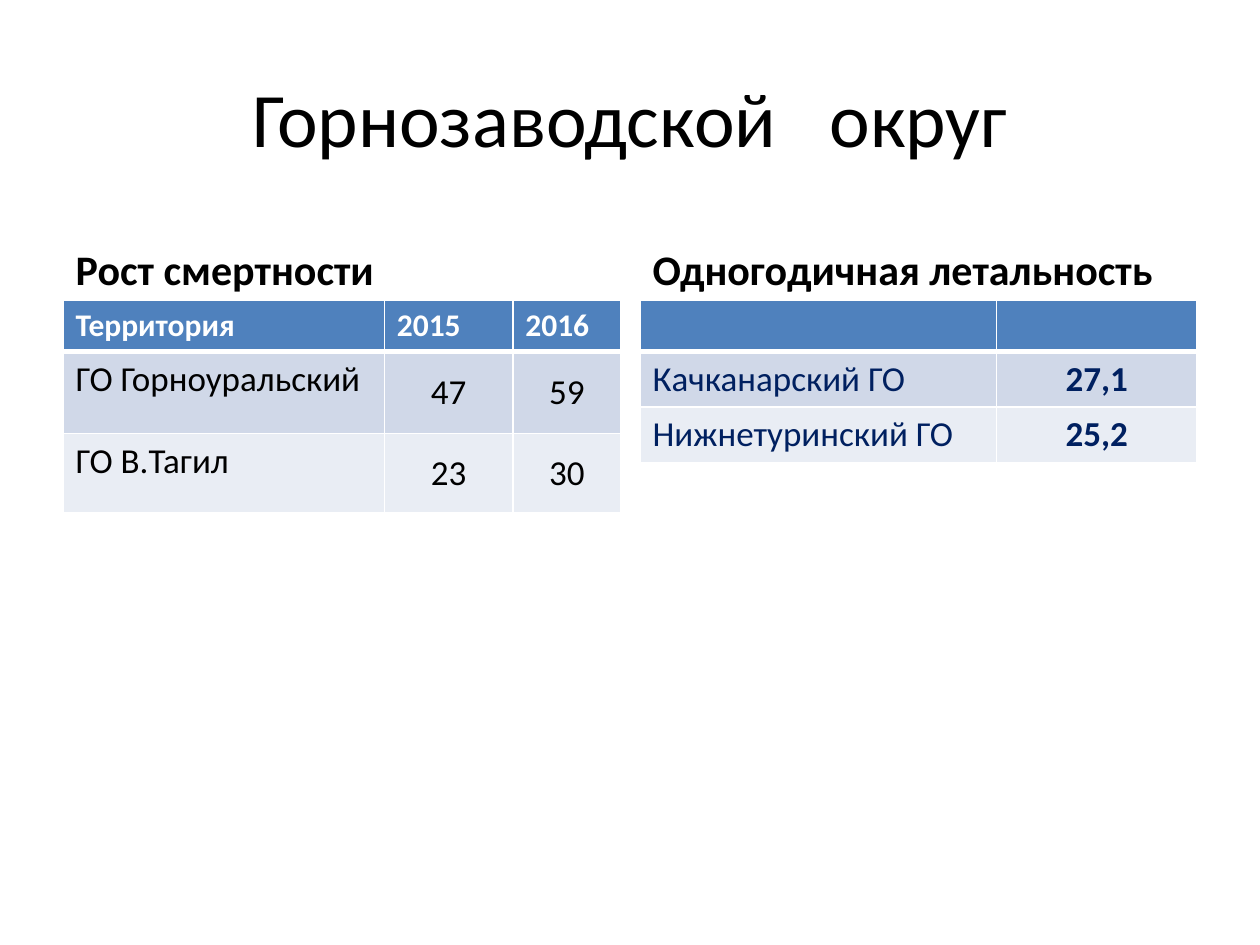
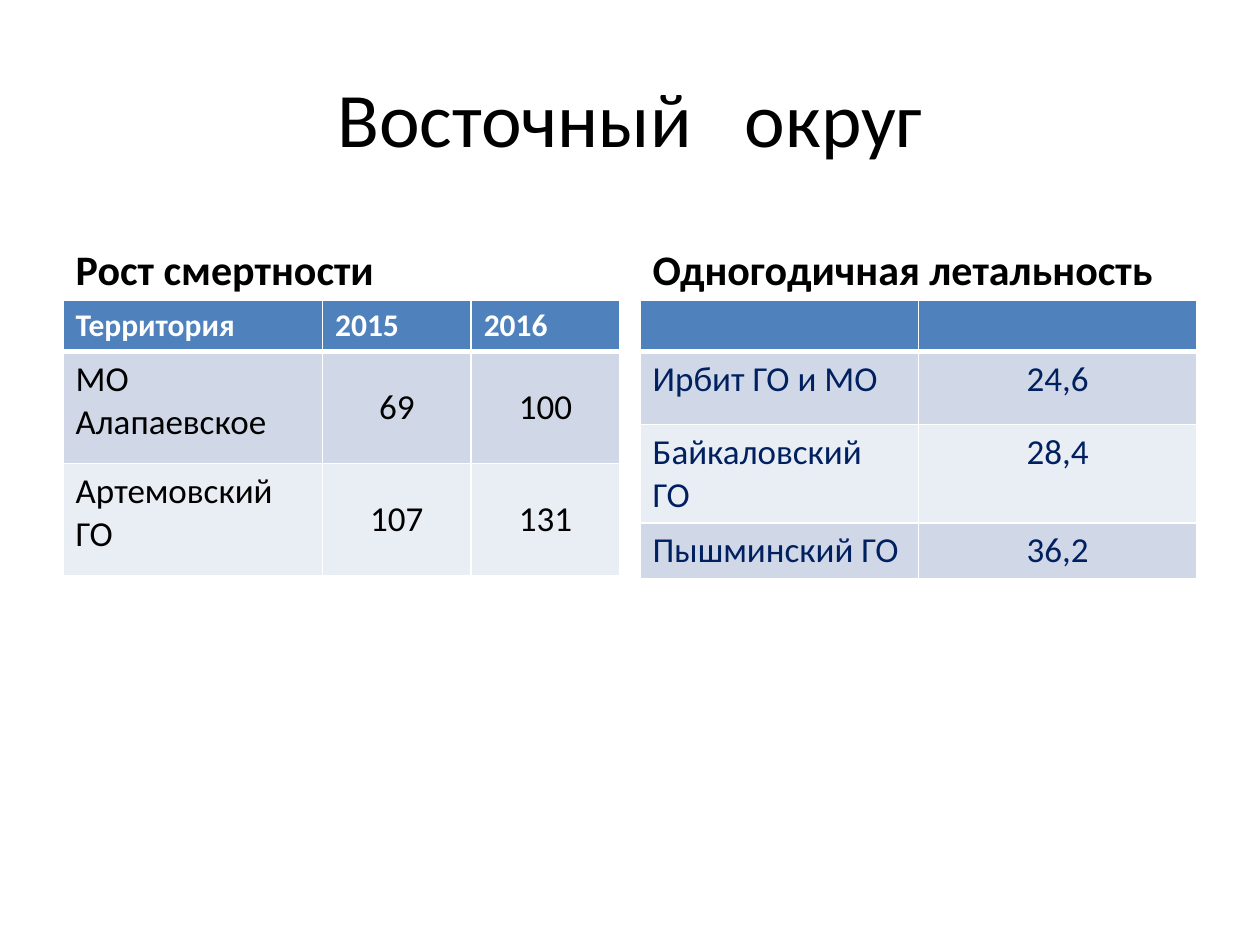
"""Build two district slides comparing mortality growth and one-year lethality."""
from lxml import etree
from pptx import Presentation
from pptx.dml.color import RGBColor
from pptx.enum.text import MSO_ANCHOR, PP_ALIGN
from pptx.oxml.ns import qn
from pptx.util import Inches, Pt

BLACK = RGBColor(0x00, 0x00, 0x00)
WHITE = RGBColor(0xFF, 0xFF, 0xFF)
NAVY = RGBColor(0x00, 0x20, 0x60)
HEADER = RGBColor(0x4F, 0x81, 0xBD)
BANDS = [RGBColor(0xD0, 0xD8, 0xE8), RGBColor(0xE9, 0xED, 0xF4)]

LEFT, RIGHT, COL_W = 0.5, 5.08, 4.42
HEAD_TOP, HEAD_H = 1.68, 0.7
TABLE_TOP = HEAD_TOP + HEAD_H
HEADER_H = 0.41
WORD_GAP = 20

growth_head = ["Территория", "2015", "2016"]
lethality_head = ["", ""]

districts = [
    {"name": ["Горнозаводской", "округ"],
     "growth": [["ГО Горноуральский", "47", "59"], ["ГО В.Тагил", "23", "30"]],
     "growth_cols": [2.55, 1.02, 0.86], "growth_rows": [0.65, 0.63],
     "lethality": [["Качканарский ГО", "27,1"], ["Нижнетуринский ГО", "25,2"]],
     "lethality_cols": [2.83, 1.59], "lethality_rows": [0.41, 0.41],
     "bold_rates": True},
    {"name": ["Восточный", "округ"],
     "growth": [["МО Алапаевское", "69", "100"], ["Артемовский ГО", "107", "131"]],
     "growth_cols": [2.06, 1.18, 1.18], "growth_rows": [0.89, 0.89],
     "lethality": [["Ирбит ГО и МО", "24,6"], ["Байкаловский ГО", "28,4"],
                   ["Пышминский ГО", "36,2"]],
     "lethality_cols": [2.21, 2.21], "lethality_rows": [0.58, 0.41, 0.41],
     "bold_rates": False},
]


def add_text(p, text, size=20, color=BLACK, bold=False, align=PP_ALIGN.LEFT):
    p.alignment = align
    r = p.add_run()
    r.text = text
    r.font.name = "Calibri"
    r.font.size = Pt(size)
    r.font.bold = bold
    r.font.color.rgb = color
    return r


def format_cell(cell, fill, top, bottom):
    tc_pr = cell._tc.get_or_add_tcPr()
    for side, width in (("L", 1), ("R", 1), ("T", top), ("B", bottom)):
        ln = etree.SubElement(tc_pr, qn(f"a:ln{side}"), w=str(Pt(width)))
        solid = etree.SubElement(ln, qn("a:solidFill"))
        etree.SubElement(solid, qn("a:srgbClr"), val=str(WHITE))
    cell.fill.solid()
    cell.fill.fore_color.rgb = fill


prs = Presentation()
prs.slide_width, prs.slide_height = Inches(10), Inches(7.5)

for district in districts:
    slide = prs.slides.add_slide(prs.slide_layouts[4])
    title, growth_title, growth_body, rate_title, rate_body = slide.placeholders
    for sp in (growth_body, rate_body):
        sp.element.getparent().remove(sp.element)

    title.left, title.top = Inches(LEFT), Inches(0.3)
    title.width, title.height = Inches(9), Inches(1.25)
    title.text_frame.vertical_anchor = MSO_ANCHOR.MIDDLE
    p = title.text_frame.paragraphs[0]
    first, second = district["name"]
    add_text(p, first, size=44, align=PP_ALIGN.CENTER)
    gap = add_text(p, " ", size=44, align=PP_ALIGN.CENTER)
    gap._r.get_or_add_rPr().set("spc", str(WORD_GAP * 100))
    add_text(p, second, size=44, align=PP_ALIGN.CENTER)

    panels = [
        (growth_title, "Рост смертности", LEFT, "growth", growth_head,
         BLACK, MSO_ANCHOR.MIDDLE, False),
        (rate_title, "Одногодичная летальность", RIGHT, "lethality", lethality_head,
         NAVY, MSO_ANCHOR.TOP, district["bold_rates"]),
    ]
    for sp, heading, x, key, head, color, anchor, bold in panels:
        sp.left, sp.top = Inches(x), Inches(HEAD_TOP)
        sp.width, sp.height = Inches(COL_W), Inches(HEAD_H)
        sp.text_frame.vertical_anchor = MSO_ANCHOR.BOTTOM
        add_text(sp.text_frame.paragraphs[0], heading, size=24, bold=True)

        rows = [head] + district[key]
        heights = [HEADER_H] + district[key + "_rows"]
        table = slide.shapes.add_table(
            len(rows), len(head), Inches(x), Inches(TABLE_TOP),
            Inches(COL_W), Inches(sum(heights))).table
        for column, width in zip(table.columns, district[key + "_cols"]):
            column.width = Inches(width)
        for i, (values, height) in enumerate(zip(rows, heights)):
            table.rows[i].height = Inches(height)
            for j, value in enumerate(values):
                cell = table.cell(i, j)
                format_cell(cell, BANDS[(i - 1) % 2] if i else HEADER,
                            top=3 if i == 1 else 1, bottom=1 if i else 3)
                p = cell.text_frame.paragraphs[0]
                if i == 0:
                    if value:
                        add_text(p, value, size=18, color=WHITE, bold=True)
                elif j == 0:
                    add_text(p, value, color=color)
                else:
                    cell.vertical_anchor = anchor
                    add_text(p, value, color=color, bold=bold, align=PP_ALIGN.CENTER)

prs.save("out.pptx")
